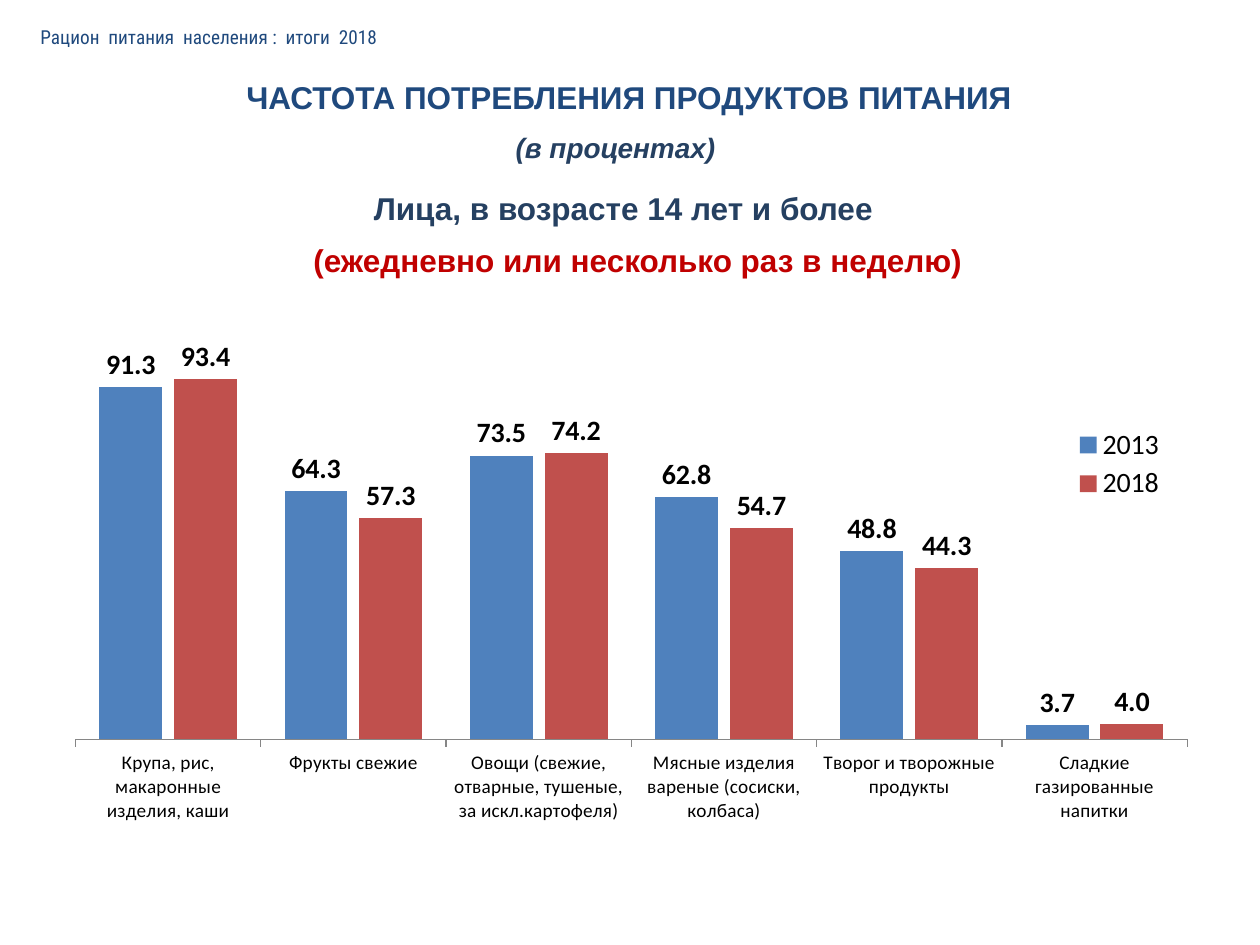
from lxml import etree
from pptx import Presentation
from pptx import util as u
from pptx.chart.data import CategoryChartData
from pptx.dml.color import RGBColor
from pptx.enum import chart as c
from pptx.enum import text as t
from pptx.oxml import parse_xml
from pptx.oxml.ns import nsdecls, qn

Pt = u.Pt
COLORS = {
    "blue": "1F497D", "navy": "254061", "red": "C00000", "black": "000000",
    "2013": "4F81BD", "2018": "C0504D", "axis": "868686",
}
CATEGORIES = [
    "Крупа, рис, макаронные изделия, каши",
    "Фрукты свежие",
    "Овощи (свежие, отварные, тушеные, за искл.картофеля)",
    "Мясные изделия вареные (сосиски, колбаса)",
    "Творог и творожные продукты",
    "Сладкие газированные напитки",
]
SERIES = {
    "2013": [91.3, 64.3, 73.5, 62.8, 48.8, 3.7],
    "2018": [93.4, 57.3, 74.2, 54.7, 44.3, 4.0],
}


def color(name):
    return RGBColor.from_string(COLORS[name])


def style_font(font, size, color_name="black", name="Calibri", bold=False, italic=False):
    font.name, font.size, font.bold, font.italic = name, Pt(size), bold, italic
    font.color.rgb = color(color_name)


def fill_text(shape, box, text, size, color_name, name="Arial", bold=True,
              italic=False, wrap=False, align=t.PP_ALIGN.LEFT):
    shape.left, shape.top, shape.width, shape.height = (Pt(value) for value in box)
    frame = shape.text_frame
    frame.text = text
    frame.word_wrap = wrap
    frame.auto_size = t.MSO_AUTO_SIZE.SHAPE_TO_FIT_TEXT
    frame.vertical_anchor = t.MSO_ANCHOR.TOP
    paragraph = frame.paragraphs[0]
    paragraph.alignment = align
    style_font(paragraph.runs[0].font, size, color_name, name, bold, italic)


def add_text(slide, box, *args, **options):
    shape = slide.shapes.add_textbox(*(Pt(value) for value in box))
    fill_text(shape, box, *args, **options)


def add_headings(slide, left, top):
    center = t.PP_ALIGN.CENTER
    fill_text(slide.shapes.title, (left, top, 457, 29),
              "ЧАСТОТА ПОТРЕБЛЕНИЯ ПРОДУКТОВ ПИТАНИЯ", 18, "blue", align=center)
    add_text(slide, (left + 155.5, top + 30, 130.5, 26.5), "(в процентах)",
             16, "navy", italic=True, align=center)
    add_text(slide, (left + 75.5, top + 63.5, 303, 29),
             "Лица, в возрасте 14 лет и более", 18, "navy")
    add_text(slide, (left + 41, top + 93, 389, 29),
             "(ежедневно или несколько раз в неделю)", 18, "red")


def manual_layout(x, y, width, height, inner=False):
    target = '<c:layoutTarget val="inner"/>' if inner else ""
    return parse_xml(
        f'<c:layout {nsdecls("c")}><c:manualLayout>{target}'
        '<c:xMode val="edge"/><c:yMode val="edge"/>'
        f'<c:x val="{x}"/><c:y val="{y}"/><c:w val="{width}"/><c:h val="{height}"/>'
        '</c:manualLayout></c:layout>')


def set_layout(element, layout, index):
    for old in element.findall(qn("c:layout")):
        element.remove(old)
    element.insert(index, layout)


def add_frequency_chart(slide, box):
    data = CategoryChartData(number_format="0.0")
    data.categories = CATEGORIES
    for name, values in SERIES.items():
        data.add_series(name, values)
    chart = slide.shapes.add_chart(
        c.XL_CHART_TYPE.COLUMN_CLUSTERED, *(Pt(value) for value in box), data).chart
    chart.has_title = False
    style_font(chart.font, 18)

    # Columns and value labels
    plot = chart.plots[0]
    plot.gap_width, plot.overlap = 76, -19
    plot.vary_by_categories = False
    for series in plot.series:
        series.format.fill.solid()
        series.format.fill.fore_color.rgb = color(series.name)
        labels = series.data_labels
        labels.show_value = True
        labels.position = c.XL_LABEL_POSITION.OUTSIDE_END
        labels.number_format, labels.number_format_is_linked = "0.0", False
        style_font(labels.font, 16, bold=True)

    # Axes
    axis = chart.category_axis
    axis.major_tick_mark = c.XL_TICK_MARK.OUTSIDE
    axis.format.line.color.rgb = color("axis")
    axis.format.line.width = Pt(0.75)
    style_font(axis.tick_labels.font, 11)
    value_axis = chart.value_axis
    value_axis.visible = False
    value_axis.has_major_gridlines = False
    value_axis.minimum_scale, value_axis.maximum_scale = 0, 100

    # Legend and plot area
    chart.has_legend = True
    legend = chart.legend
    legend.position = c.XL_LEGEND_POSITION.RIGHT
    legend.include_in_layout = False
    style_font(legend.font, 16)
    legend_element = legend._element
    position = legend_element.find(qn("c:legendPos"))
    set_layout(legend_element, manual_layout(0.86, 0.17, 0.09, 0.14),
               legend_element.index(position) + 1)
    plot_area = chart._chartSpace.chart.plotArea
    set_layout(plot_area, manual_layout(0.045, 0.051, 0.916, 0.658, inner=True), 0)


def main():
    presentation = Presentation()
    presentation.slide_width, presentation.slide_height = Pt(720), Pt(540)
    slide = presentation.slides.add_slide(presentation.slide_layouts[5])
    add_headings(slide, 131, 41)
    add_frequency_chart(slide, (12, 185, 693.5, 335))
    # Running header
    add_text(slide, (16, 11, 227, 21), "Рацион  питания  населения :  итоги  2018",
             11, "blue", name="Roboto Condensed", bold=False, wrap=True)
    presentation.save("out.pptx")


if __name__ == "__main__":
    main()
